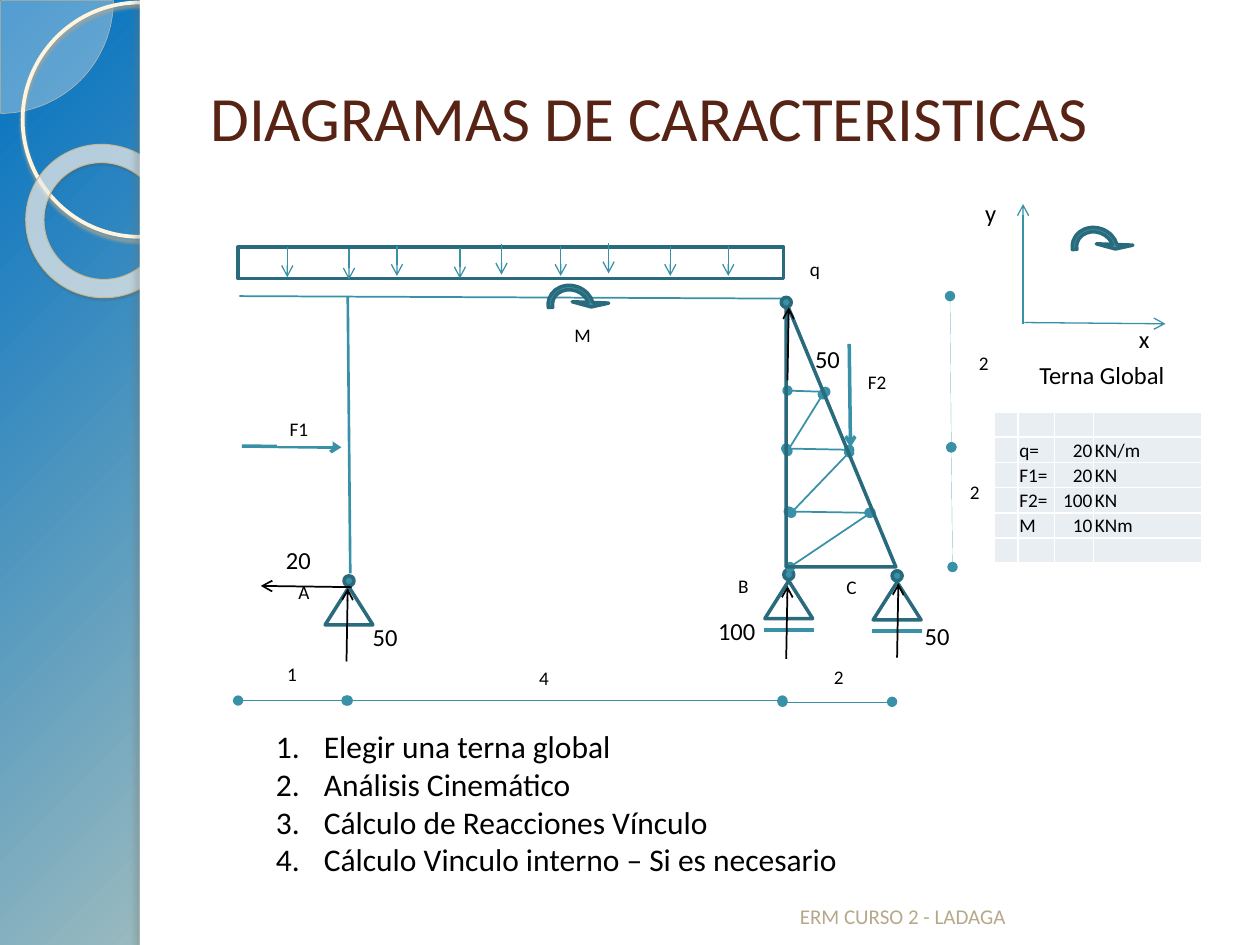
from lxml import etree
from pptx import Presentation
from pptx.dml.color import RGBColor
from pptx.enum.shapes import MSO_CONNECTOR, MSO_SHAPE
from pptx.enum.text import MSO_ANCHOR, MSO_AUTO_SIZE, PP_ALIGN
from pptx.oxml import parse_xml
from pptx.oxml.ns import nsdecls, qn
from pptx.util import Pt

STRAIGHT = MSO_CONNECTOR.STRAIGHT
RECT, OVAL, DONUT, PIE = MSO_SHAPE.RECTANGLE, MSO_SHAPE.OVAL, MSO_SHAPE.DONUT, MSO_SHAPE.PIE
TRIANGLE, RIGHT_TRIANGLE = MSO_SHAPE.ISOSCELES_TRIANGLE, MSO_SHAPE.RIGHT_TRIANGLE
CURVED_ARROW = MSO_SHAPE.CIRCULAR_ARROW
TOP, MIDDLE, BOTTOM = MSO_ANCHOR.TOP, MSO_ANCHOR.MIDDLE, MSO_ANCHOR.BOTTOM
LEFT, RIGHT = PP_ALIGN.LEFT, PP_ALIGN.RIGHT
NO_AUTOFIT = MSO_AUTO_SIZE.NONE

PX = 9144
THEME = {
    "font": "Calibri", "title": "572314", "footer": "B6A98A", "ink": "000000",
    "paper": "FFFFFF", "accent": "3891A7", "edge": "296B7C", "cell": "E8EEF1",
    "pie": "FEFAF4", "pie_edge": "D3C39F", "ring": "FFF5DE", "donut": "FFFEFB",
    "donut_edge": "C7B893", "ring_shadow": "B0A68F", "donut_shadow": "5A5444",
    "strip_shadow": "736F63", "sky": [(0, "0070C0"), (82, "FFEBBE"), (100, "C9B484")],
    "title_size": 36, "list_size": 18, "value_size": 14, "footer_size": 12, "label_size": 11,
}

TITLE = "DIAGRAMAS DE CARACTERISTICAS"
FOOTER = "ERM CURSO 2 - LADAGA"
STEPS = ["Elegir una terna global", "Análisis Cinemático",
         "Cálculo de Reacciones Vínculo", "Cálculo Vinculo interno – Si es necesario"]
LOADS = [("", "", "", ""), ("", "q=", "20", "KN/m"), ("", "F1=", "20", "KN"),
         ("", "F2=", "100", "KN"), ("", "M", "10", "KNm"), ("", "", "", "")]
LOAD_COLUMNS = [19, 29, 31, 86]
SUPPORTS = [("A", 258, 457, False), ("B", 607, 452, True), ("C", 693, 453, True)]
LABELS = [("M", 446, 252, 27), ("q", 633, 199, 27), ("F2", 679, 289, 44), ("F1", 220, 326, 44),
          ("4", 418, 524, 44), ("1", 218, 521, 44), ("2", 652, 523, 44),
          ("2", 767, 274, 44), ("2", 760, 376, 44)]
VALUES = [("x", 894, 252, 31), ("y", 772, 152, 31), ("Terna Global", 815, 281, 126),
          ("20", 217, 428, 59), ("50", 286, 489, 59), ("100", 560, 484, 59),
          ("50", 724, 488, 59), ("50", 637, 268, 59)]
FORCES = [(192, 354, 271, 355), (674, 273, 675, 355)]
TRUSS_BARS = [(624, 356, 674, 357), (626, 406, 690, 407), (625, 310, 655, 311),
              (625, 358, 653, 313), (628, 407, 674, 359), (627, 450, 691, 407)]
COLUMN = (276, 235, 278, 455)
BEAM = (190, 235, 620, 237)
LOAD_ARROWS = [(228, 196), (277, 198), (315, 195), (365, 197), (398, 194),
               (445, 195), (483, 193), (532, 195), (578, 195)]
DIMENSIONS = [(754, 235, 755, 355), (755, 355, 756, 450), (276, 556, 621, 556),
              (621, 557, 708, 557), (189, 556, 275, 556)]
AXES = [(813, 256, 925, 257), (812, 257, 812, 162)]
REACTIONS = [(279, 466, 207, 465), (275, 525, 276, 467), (624, 523, 625, 465),
             (712, 522, 713, 463), (625, 302, 626, 244)]
MOMENTS = [(422, 214), (838, 168)]


def color(name):
    return RGBColor.from_string(THEME[name])


def place(shape, left, top, width, height):
    shape.left, shape.top = left * PX, top * PX
    shape.width, shape.height = width * PX, height * PX


def add_shape(page, kind, box, fill=None, edge=None, weight=2, alpha=None):
    shape = page.shapes.add_shape(kind, *(side * PX for side in box))
    shape.shadow.inherit = False
    if fill:
        shape.fill.solid()
        shape.fill.fore_color.rgb = color(fill)
        if alpha:
            tint = shape.element.spPr.find(".//" + qn("a:srgbClr"))
            etree.SubElement(tint, qn("a:alpha"), val=str(alpha * 1000))
    else:
        shape.fill.background()
    if edge:
        shape.line.color.rgb = color(edge)
        shape.line.width = Pt(weight)
    else:
        shape.line.fill.background()
    return shape


def add_shadow(shape, name, alpha, blur, distance, angle):
    effects = shape.element.spPr.find(qn("a:effectLst"))
    shadow = etree.SubElement(effects, qn("a:outerShdw"), blurRad=str(Pt(blur)),
                              dist=str(Pt(distance)), dir=str(angle * 60000))
    tint = etree.SubElement(shadow, qn("a:srgbClr"), val=THEME[name])
    etree.SubElement(tint, qn("a:alpha"), val=str(alpha * 1000))


def add_line(page, ends, weight, name="accent", head=None, tail=None):
    line = page.shapes.add_connector(STRAIGHT, *(end * PX for end in ends))
    line.line.color.rgb = color(name)
    outline = line.element.spPr.find(qn("a:ln"))
    outline.set("w", str(Pt(weight)))
    for tag, kind in (("a:headEnd", head), ("a:tailEnd", tail)):
        if kind:
            etree.SubElement(outline, qn(tag), type=kind)
    etree.SubElement(line.element.spPr, qn("a:effectLst"))


def style(para, size, name="ink", align=LEFT):
    para.alignment = align
    para.font.name = THEME["font"]
    para.font.size = Pt(THEME[size])
    para.font.color.rgb = color(name)


def write(box, text, size, name="ink", anchor=TOP):
    frame = box.text_frame
    frame.word_wrap = True
    frame.auto_size = NO_AUTOFIT
    frame.vertical_anchor = anchor
    frame.text = text
    style(frame.paragraphs[0], size, name)


def add_text(page, text, box, size, name="ink", anchor=TOP):
    write(page.shapes.add_textbox(*(side * PX for side in box)), text, size, name, anchor)


def add_label(page, text, left, top, width):
    write(add_shape(page, RECT, (left, top, width, 28), "paper"), text, "label_size", anchor=MIDDLE)


def add_backdrop(page):
    page.background.fill.solid()
    holder = page.element.find(".//" + qn("p:bgPr"))
    stops = "".join(f'<a:gs pos="{at * 1000}"><a:srgbClr val="{tint}"/></a:gs>'
                    for at, tint in THEME["sky"])
    holder.replace(holder[0], parse_xml(
        f'<a:gradFill {nsdecls("a")} rotWithShape="1"><a:gsLst>{stops}</a:gsLst><a:path path="circle">'
        '<a:fillToRect l="-24000" t="-20000" r="124000" b="120000"/></a:path></a:gradFill>'))
    pie = add_shape(page, PIE, (-89, -89, 179, 179), "pie", "pie_edge", 0.25, 33)
    pie.adjustments[0], pie.adjustments[1] = 0, 54
    ring = add_shape(page, OVAL, (18, 2, 186, 186), edge="ring", weight=2.15)
    add_shadow(ring, "ring_shadow", 85, 2, 2, 90)
    donut = add_shape(page, DONUT, (20, 115, 123, 121), "donut", "donut_edge", 0.58, 65)
    donut.rotation = 38.6
    donut.adjustments[0] = 0.12
    add_shadow(donut, "donut_shadow", 35, 1, 1.2, 75)
    add_shape(page, RECT, (111, 0, 889, 750), "paper")
    strip = add_shape(page, RECT, (111, 0, 8, 750), "paper")
    add_shadow(strip, "strip_shadow", 25, 3, 3, 180)


def add_support(page, name, left, top, roller):
    add_shape(page, OVAL, (left + 15, top, 8, 8), "accent", "edge")
    add_shape(page, TRIANGLE, (left, top + 9, 38, 30), edge="edge")
    add_label(page, name, left - 31, top - 1, 27)
    if roller:
        add_line(page, (left - 1, top + 48, left + 39, top + 48), 2)


def add_moment(page, left, top):
    arrow = add_shape(page, CURVED_ARROW, (left, top, 62, 58), "accent", "edge")
    arrow.rotation = 19.5
    for index, value in enumerate((0.06, 7.69, 197.9, 94.12, 0.25)):
        arrow.adjustments[index] = value


def add_structure(page):
    for support in SUPPORTS:
        add_support(page, *support)
    for force in FORCES:
        add_line(page, force, 2, tail="arrow")
    for bar in TRUSS_BARS:
        add_line(page, bar, 1, head="oval", tail="oval")
    add_line(page, COLUMN, 1.5)
    add_line(page, BEAM, 1)
    add_shape(page, RIGHT_TRIANGLE, (624, 240, 87, 210), edge="edge")
    add_shape(page, RECT, (189, 196, 433, 25), edge="edge")
    for left, top in LOAD_ARROWS:
        add_line(page, (left, top, left, top + 24), 0.75, tail="arrow")
    for moment in MOMENTS:
        add_moment(page, *moment)
    for label in LABELS:
        add_label(page, *label)
    for dimension in DIMENSIONS:
        add_line(page, dimension, 0, head="oval", tail="oval")
    add_shape(page, OVAL, (620, 236, 8, 8), "accent", "edge")
    for axis in AXES:
        add_line(page, axis, 0.75, tail="arrow")
    for reaction in REACTIONS:
        add_line(page, reaction, 1, "ink", tail="arrow")
    for text, left, top, width in VALUES:
        add_text(page, text, (left, top, width, 34), "value_size")


def fill_cell(cell, text, align):
    cell.margin_left = cell.margin_right = cell.margin_top = PX
    cell.margin_bottom = 0
    cell.vertical_anchor = BOTTOM
    para = cell.text_frame.paragraphs[0]
    if text:
        para.text = text
        style(para, "label_size", align=align)
    else:
        etree.SubElement(para._p, qn("a:endParaRPr"), sz=str(THEME["label_size"] * 100))
    properties = cell._tc.get_or_add_tcPr()
    for side in ("a:lnL", "a:lnR", "a:lnT", "a:lnB"):
        border = etree.SubElement(properties, qn(side), w=str(Pt(1)))
        solid = etree.SubElement(border, qn("a:solidFill"))
        etree.SubElement(solid, qn("a:srgbClr"), val=THEME["paper"])
    cell.fill.solid()
    cell.fill.fore_color.rgb = color("cell")


def add_loads(page):
    table = page.shapes.add_table(len(LOADS), len(LOAD_COLUMNS), 789 * PX, 327 * PX,
                                  sum(LOAD_COLUMNS) * PX, 20 * len(LOADS) * PX).table
    table.first_row = table.horz_banding = False
    for column, width in zip(table.columns, LOAD_COLUMNS):
        column.width = width * PX
    for row, texts in enumerate(LOADS):
        for column, text in enumerate(texts):
            fill_cell(table.cell(row, column), text, RIGHT if column == 2 else LEFT)


def add_steps(body):
    place(body, 209, 572, 661, 131)
    frame = body.text_frame
    frame.text = "\n".join(STEPS)
    frame.auto_size = NO_AUTOFIT
    frame.vertical_anchor = TOP
    for para in frame.paragraphs:
        properties = para._p.get_or_add_pPr()
        properties.set("marL", str(38 * PX))
        properties.set("indent", str(-38 * PX))
        etree.SubElement(properties, qn("a:buFont"), typeface="+mj-lt")
        etree.SubElement(properties, qn("a:buAutoNum"), type="arabicPeriod")
        para.space_before = Pt(0)
        style(para, "list_size")


def main():
    deck = Presentation()
    deck.slide_width, deck.slide_height = 1000 * PX, 750 * PX
    page = deck.slides.add_slide(deck.slide_layouts[1])
    title, body = page.shapes.title, page.placeholders[1]
    add_backdrop(page)
    for holder in (title, body):
        holder.element.getparent().append(holder.element)
    place(title, 157, 30, 820, 125)
    write(title, TITLE, "title_size", "title", MIDDLE)
    add_steps(body)
    add_text(page, FOOTER, (625, 690, 317, 52), "footer_size", "footer", BOTTOM)
    add_structure(page)
    add_loads(page)
    deck.save("out.pptx")


if __name__ == "__main__":
    main()
